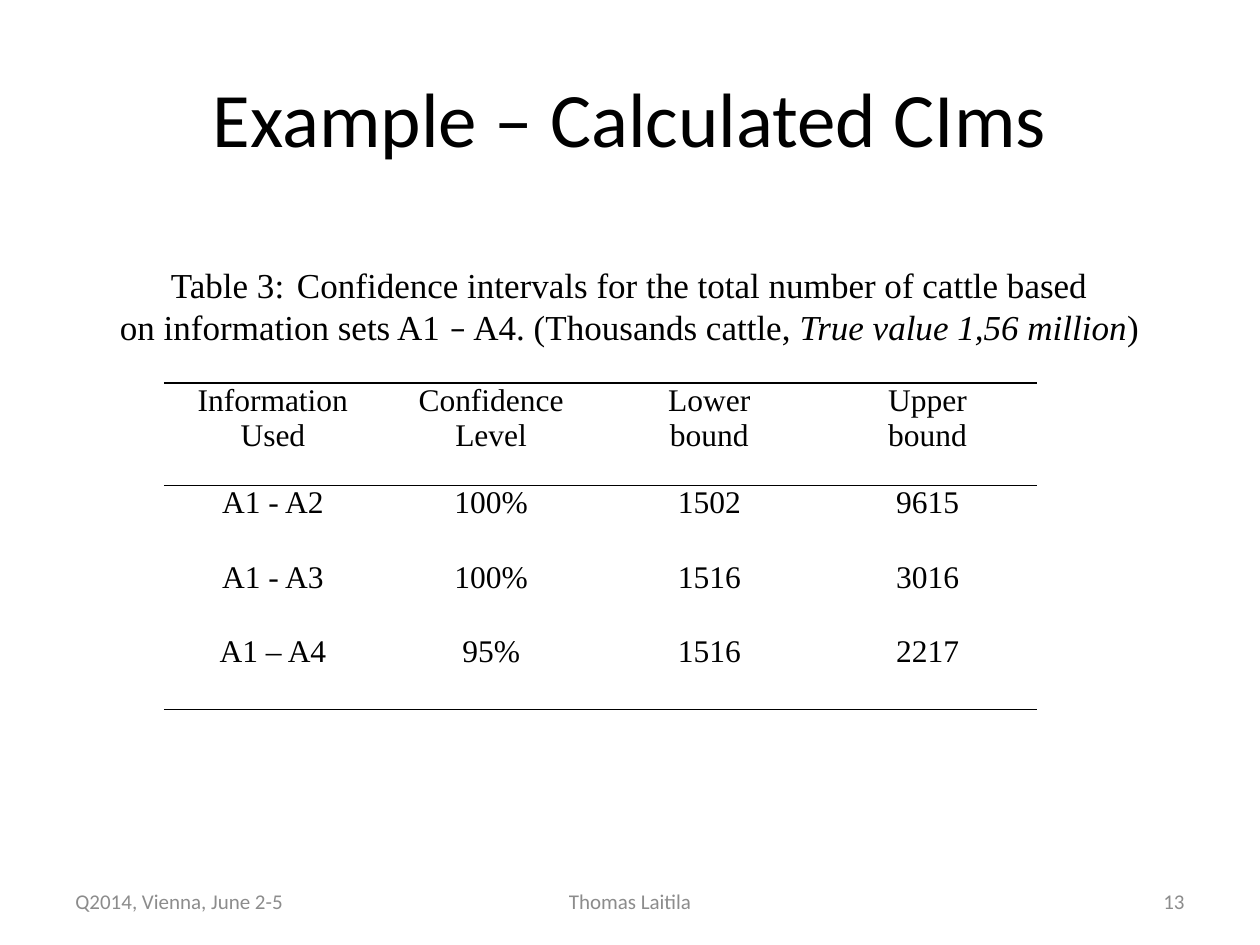
from dataclasses import dataclass

from lxml import etree
from pptx import Presentation
from pptx import util as u
from pptx.dml.color import RGBColor
from pptx.enum import text
from pptx.oxml.ns import qn

Pt = u.Pt
ALIGN = text.PP_ALIGN


@dataclass(frozen=True)
class Theme:
    ink: str = "000000"
    muted: str = "8C8C8C"
    sans: str = "Calibri"
    serif: str = "Times New Roman"
    title_size: float = 44
    caption_size: float = 20
    table_size: float = 18
    footer_size: float = 12
    outer_rule: float = 1
    inner_rule: float = 0.5


THEME = Theme()

ROWS = [
    ["Information\nUsed", "Confidence\nLevel", "Lower\nbound", "Upper\nbound"],
    ["A1 - A2", "100%", "1502", "9615"],
    ["A1 - A3", "100%", "1516", "3016"],
    ["A1 – A4", "95%", "1516", "2217"],
]
ROW_HEIGHTS = [58.4, 42.7, 42.7, 42.7]
COLUMN_WIDTH = 124.7


def style_paragraph(paragraph, font_name, size, color, align):
    paragraph.alignment = align
    paragraph.font.name = font_name
    paragraph.font.size = Pt(size)
    paragraph.font.color.rgb = RGBColor.from_string(color)


def add_text(slide, box, content, font_name, size, color, align, wrap=True):
    """Add a vertically centred text box and return its first paragraph."""
    shape = slide.shapes.add_textbox(*map(Pt, box))
    frame = shape.text_frame
    frame.word_wrap = wrap
    frame.vertical_anchor = text.MSO_ANCHOR.MIDDLE
    paragraph = frame.paragraphs[0]
    if content:
        paragraph.add_run().text = content
    style_paragraph(paragraph, font_name, size, color, align)
    return paragraph


def add_caption(slide):
    paragraph = add_text(slide, (59, 146.9, 601.2, 55.4), "", THEME.serif,
                         THEME.caption_size, THEME.ink, ALIGN.CENTER, wrap=False)
    paragraph.add_run().text = (
        "Table 3:\tConfidence intervals for the total number of cattle based")
    paragraph.add_line_break()
    paragraph.add_run().text = "on information sets A1 "
    dash = paragraph.add_run()
    dash.text = "–"
    dash.font.name = THEME.sans
    paragraph.add_run().text = " A4. (Thousands cattle, "
    true_value = paragraph.add_run()
    true_value.text = "True value 1,56 million"
    true_value.font.italic = True
    paragraph.add_run().text = ")"


def set_borders(cell, top, bottom):
    """Draw horizontal rules of the given widths; zero means no rule."""
    properties = cell._tc.get_or_add_tcPr()
    for side, width in (("L", 0), ("R", 0), ("T", top), ("B", bottom)):
        line = etree.SubElement(properties, qn(f"a:ln{side}"), w=str(int(Pt(width))))
        if width:
            fill = etree.SubElement(line, qn("a:solidFill"))
            etree.SubElement(fill, qn("a:srgbClr"), val=THEME.ink)
        else:
            etree.SubElement(line, qn("a:noFill"))


def add_interval_table(slide):
    columns = len(ROWS[0])
    frame = slide.shapes.add_table(len(ROWS), columns, Pt(93.6), Pt(218.9),
                                   Pt(COLUMN_WIDTH * columns), Pt(sum(ROW_HEIGHTS)))
    table = frame.table
    table.first_row = table.horz_banding = False
    for column in table.columns:
        column.width = Pt(COLUMN_WIDTH)

    # One rule above and below the header, and one at the foot
    rules = [THEME.outer_rule, THEME.inner_rule, 0, 0, THEME.outer_rule]
    for r, (values, height) in enumerate(zip(ROWS, ROW_HEIGHTS)):
        table.rows[r].height = Pt(height)
        for c, value in enumerate(values):
            cell = table.cell(r, c)
            cell.margin_left = cell.margin_right = Pt(5)
            cell.margin_top = cell.margin_bottom = 0
            set_borders(cell, rules[r], rules[r + 1])
            cell.fill.background()
            cell.text_frame.text = value
            for paragraph in cell.text_frame.paragraphs:
                style_paragraph(paragraph, THEME.serif, THEME.table_size,
                                THEME.ink, ALIGN.CENTER)


def add_footer(slide):
    for left, width, content, align in (
        (36, 168, "Q2014, Vienna, June 2-5", ALIGN.LEFT),
        (246, 228, "Thomas Laitila", ALIGN.CENTER),
        (516, 168, "13", ALIGN.RIGHT),
    ):
        add_text(slide, (left, 500.5, width, 28.75), content, THEME.sans,
                 THEME.footer_size, THEME.muted, align)


def main():
    presentation = Presentation()
    presentation.slide_width, presentation.slide_height = Pt(720), Pt(540)
    slide = presentation.slides.add_slide(presentation.slide_layouts[6])

    # Title
    add_text(slide, (36, 21.6, 648, 90), "Example – Calculated CIms", THEME.sans,
             THEME.title_size, THEME.ink, ALIGN.CENTER)
    # Table and its caption
    add_interval_table(slide)
    add_caption(slide)
    # Footer
    add_footer(slide)

    presentation.save("out.pptx")


if __name__ == "__main__":
    main()
